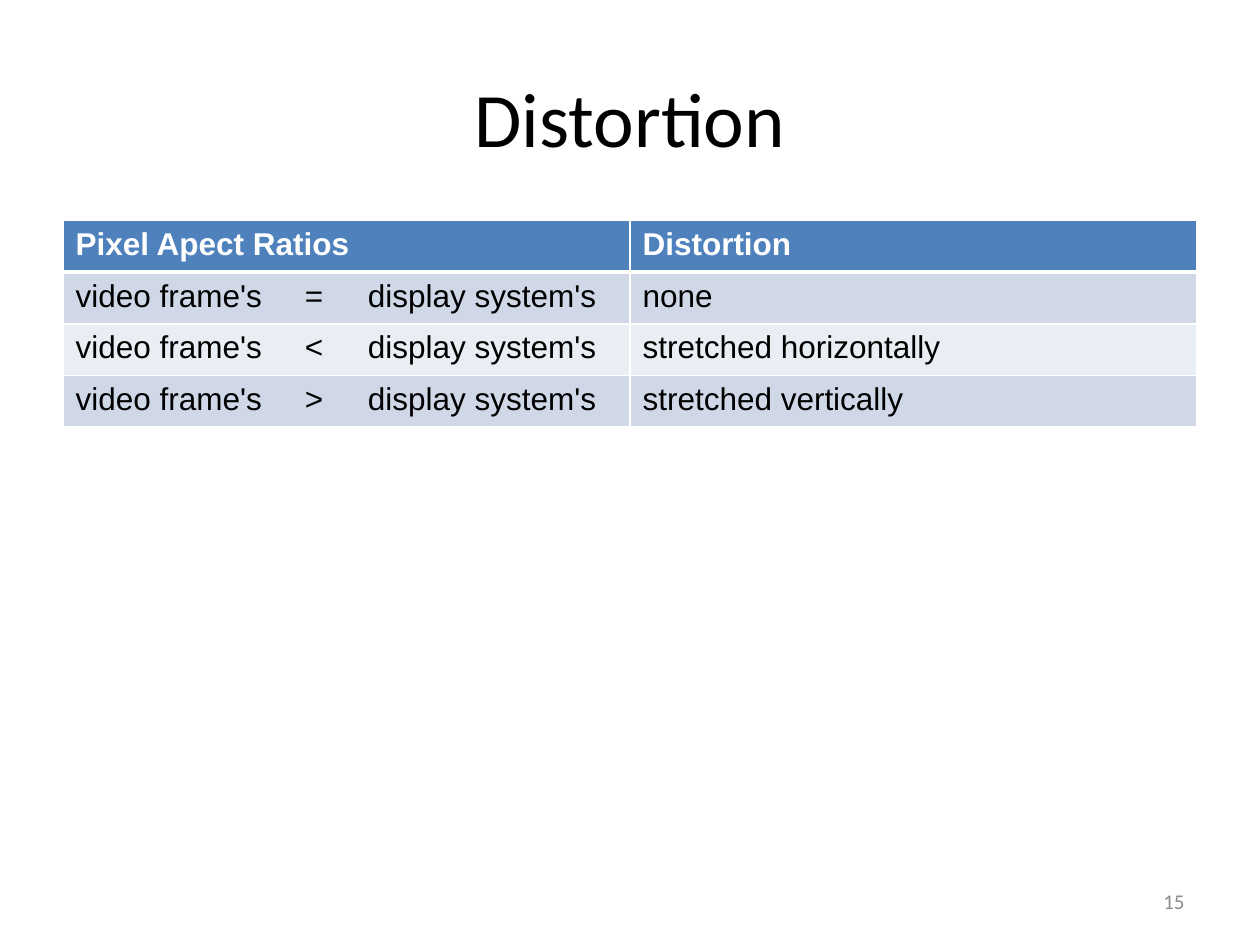
"""Build the slide that relates pixel aspect ratios to distortion."""
from dataclasses import dataclass

from lxml.etree import SubElement
from pptx import Presentation
from pptx.dml.color import RGBColor
from pptx.enum.text import MSO_ANCHOR, PP_ALIGN
from pptx.oxml.ns import qn
from pptx.shapes.base import BaseShape
from pptx.slide import Slide
from pptx.table import _Cell
from pptx.util import Inches, Pt

BLACK = RGBColor(0x00, 0x00, 0x00)
WHITE = RGBColor(0xFF, 0xFF, 0xFF)
GRAY = RGBColor(0x8C, 0x8C, 0x8C)
HEADER_BLUE = RGBColor(0x4F, 0x81, 0xBD)
BAND_DARK = RGBColor(0xD0, 0xD8, 0xE8)
BAND_LIGHT = RGBColor(0xE9, 0xED, 0xF4)
COLUMN_WIDTH = Inches(4.5)
ROW_HEIGHT = Inches(0.41)
COMPARISON_TABS = (Inches(1.82), Inches(2.32))


@dataclass(frozen=True)
class TextStyle:
    font: str
    size: int
    color: RGBColor
    bold: bool = False
    alignment: PP_ALIGN = PP_ALIGN.LEFT


@dataclass(frozen=True)
class TableRow:
    ratios: str
    distortion: str


TITLE_STYLE = TextStyle("Calibri", 44, BLACK, alignment=PP_ALIGN.CENTER)
NUMBER_STYLE = TextStyle("Calibri", 12, GRAY, alignment=PP_ALIGN.RIGHT)
HEADER_STYLE = TextStyle("Arial", 18, WHITE, bold=True)
BODY_STYLE = TextStyle("Arial", 18, BLACK)

ROWS = [TableRow("Pixel Apect Ratios", "Distortion")] + [
    TableRow(f"video frame's\t{sign}\tdisplay system's", distortion)
    for sign, distortion in (
        ("=", "none"),
        ("<", "stretched horizontally"),
        (">", "stretched vertically"),
    )
]


def set_text(holder: BaseShape | _Cell, text: str, style: TextStyle) -> None:
    """Write one paragraph and format its runs."""
    holder.text_frame.text = text
    paragraph = holder.text_frame.paragraphs[0]
    paragraph.alignment = style.alignment
    for run in paragraph.runs:
        run.font.name = style.font
        run.font.size = Pt(style.size)
        run.font.bold = style.bold
        run.font.color.rgb = style.color


def set_tab_stops(cell: _Cell) -> None:
    """Align the parts of a comparison on tab stops."""
    properties = cell.text_frame.paragraphs[0]._p.get_or_add_pPr()
    tab_list = SubElement(properties, qn("a:tabLst"))
    for position in COMPARISON_TABS:
        SubElement(tab_list, qn("a:tab"), pos=str(position), algn="l")


def set_borders(cell: _Cell, top: int, bottom: int) -> None:
    """Draw white cell borders with the given top and bottom widths."""
    properties = cell._tc.get_or_add_tcPr()
    for side, width in (("L", 1), ("R", 1), ("T", top), ("B", bottom)):
        line = SubElement(properties, qn(f"a:ln{side}"), w=str(Pt(width)))
        fill = SubElement(line, qn("a:solidFill"))
        SubElement(fill, qn("a:srgbClr"), val=str(WHITE))


def add_distortion_table(slide: Slide, rows: list[TableRow]) -> None:
    """Add the table with its header and banded rows."""
    table = slide.shapes.add_table(
        len(rows), 2, Inches(0.5), Inches(1.75), 2 * COLUMN_WIDTH, len(rows) * ROW_HEIGHT
    ).table
    for row_index, row in enumerate(rows):
        is_header = row_index == 0
        band = BAND_DARK if row_index % 2 else BAND_LIGHT
        for column_index, text in enumerate((row.ratios, row.distortion)):
            cell = table.cell(row_index, column_index)
            set_text(cell, text, HEADER_STYLE if is_header else BODY_STYLE)
            if "\t" in text:
                set_tab_stops(cell)
            set_borders(cell, 3 if row_index == 1 else 1, 3 if is_header else 1)
            cell.fill.solid()
            cell.fill.fore_color.rgb = HEADER_BLUE if is_header else band


def main() -> None:
    """Create the presentation and save it."""
    presentation = Presentation()
    presentation.slide_width, presentation.slide_height = Inches(10), Inches(7.5)
    slide = presentation.slides.add_slide(presentation.slide_layouts[5])

    title = slide.shapes.title
    title.left, title.top = Inches(0.5), Inches(0.3)
    title.width, title.height = Inches(9), Inches(1.25)
    set_text(title, "Distortion", TITLE_STYLE)
    title.text_frame.vertical_anchor = MSO_ANCHOR.MIDDLE

    add_distortion_table(slide, ROWS)

    number = slide.shapes.add_textbox(Inches(7.17), Inches(6.95), Inches(2.33), Inches(0.4))
    set_text(number, "15", NUMBER_STYLE)
    number.text_frame.word_wrap = True
    number.text_frame.vertical_anchor = MSO_ANCHOR.MIDDLE

    presentation.save("out.pptx")


if __name__ == "__main__":
    main()
